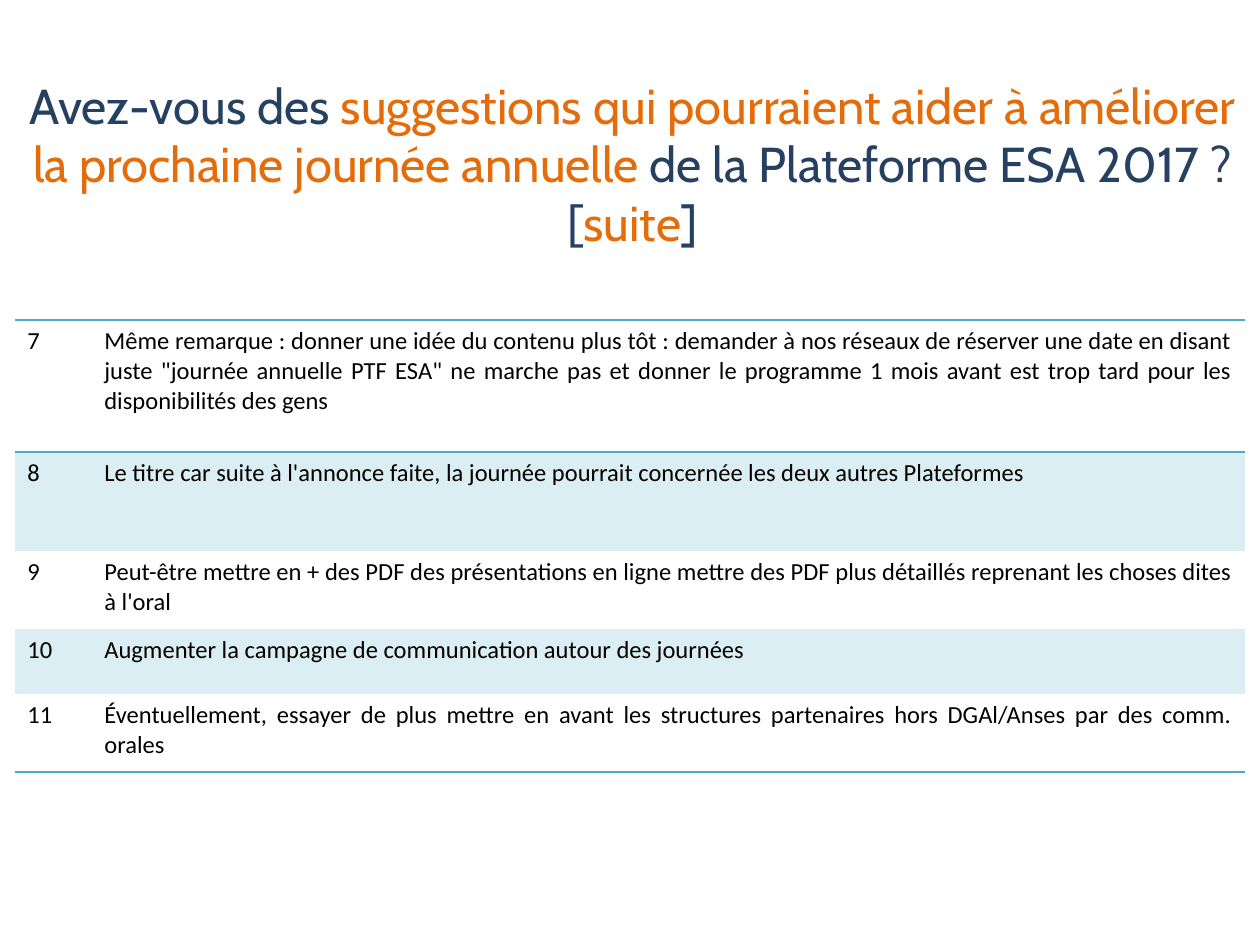
"""Build the survey slide with its title and table of suggestions 7 to 11."""
from lxml.etree import SubElement
from pptx import Presentation
from pptx.dml.color import RGBColor
from pptx.enum.text import MSO_ANCHOR, MSO_AUTO_SIZE, PP_ALIGN
from pptx.oxml.ns import qn
from pptx.util import Cm, Pt

NAVY, ORANGE, BLACK = "254061", "E46C0A", "000000"
TEAL, PALE_TEAL = "4BACC6", "DBEEF4"
NO_STYLE = "{2D5ABB26-0587-4C30-8999-92F81FD0307C}"


def add_text(para, text, font, size, color, align):
    para.alignment = align
    span = para.add_run()
    span.text = text
    span.font.name = font
    span.font.size = Pt(size)
    span.font.color.rgb = RGBColor.from_string(color)


def add_border(cell, side):
    line = SubElement(cell._tc.get_or_add_tcPr(), qn(f"a:{side}"), w=str(Pt(1)))
    fill = SubElement(line, qn("a:solidFill"))
    SubElement(fill, qn("a:srgbClr"), val=TEAL)


deck = Presentation()
deck.slide_width, deck.slide_height = Cm(25.4), Cm(19.05)
page = deck.slides.add_slide(deck.slide_layouts[5])

title = page.shapes.title
title.left, title.top, title.width, title.height = Cm(0.2), Cm(2.54), Cm(25.1), Cm(3.18)
frame = title.text_frame
frame.word_wrap = True
frame.auto_size = MSO_AUTO_SIZE.NONE
frame.vertical_anchor = MSO_ANCHOR.MIDDLE
frame.margin_bottom = Cm(1.8)
title_parts = [
    ("Avez-vous des ", NAVY),
    ("suggestions qui pourraient aider à améliorer la prochaine journée annuelle ", ORANGE),
    ("de la Plateforme ESA 2017 ? [", NAVY),
    ("suite", ORANGE),
    ("]", NAVY),
]
for text, color in title_parts:
    add_text(frame.paragraphs[0], text, "Cabin", 28, color, PP_ALIGN.CENTER)

suggestions = [
    (2.66, "Même remarque : donner une idée du contenu plus tôt : demander à nos réseaux "
           "de réserver une date en disant juste \"journée annuelle PTF ESA\" ne marche pas "
           "et donner le programme 1 mois avant est trop tard pour les disponibilités des gens"),
    (2, "Le titre car suite à l'annonce faite, la journée pourrait concernée "
        "les deux autres Plateformes"),
    (1.57, "Peut-être mettre en + des PDF des présentations en ligne mettre des PDF "
           "plus détaillés reprenant les choses dites à l'oral"),
    (1.31, "Augmenter la campagne de communication autour des journées"),
    (1.57, "Éventuellement, essayer de plus mettre en avant les structures partenaires "
           "hors DGAl/Anses par des comm. orales"),
]
total_height = sum(height for height, text in suggestions)
table = page.shapes.add_table(
    len(suggestions), 2, Cm(0.3), Cm(6.45), Cm(24.8), Cm(total_height)).table
table._tbl.tblPr.find(qn("a:tableStyleId")).text = NO_STYLE
table.columns[0].width, table.columns[1].width = Cm(1.55), Cm(23.25)

last = len(suggestions) - 1
for index, (height, suggestion) in enumerate(suggestions):
    table.rows[index].height = Cm(height)
    for column, text in enumerate((str(index + 7), suggestion)):
        cell = table.cell(index, column)
        add_text(cell.text_frame.paragraphs[0], text, "Calibri", 14, BLACK, PP_ALIGN.JUSTIFY)
        if index == 0:
            add_border(cell, "lnT")
        if index in (0, last):
            add_border(cell, "lnB")
        if index % 2:
            cell.fill.solid()
            cell.fill.fore_color.rgb = RGBColor.from_string(PALE_TEAL)
        else:
            cell.fill.background()

deck.save("out.pptx")
